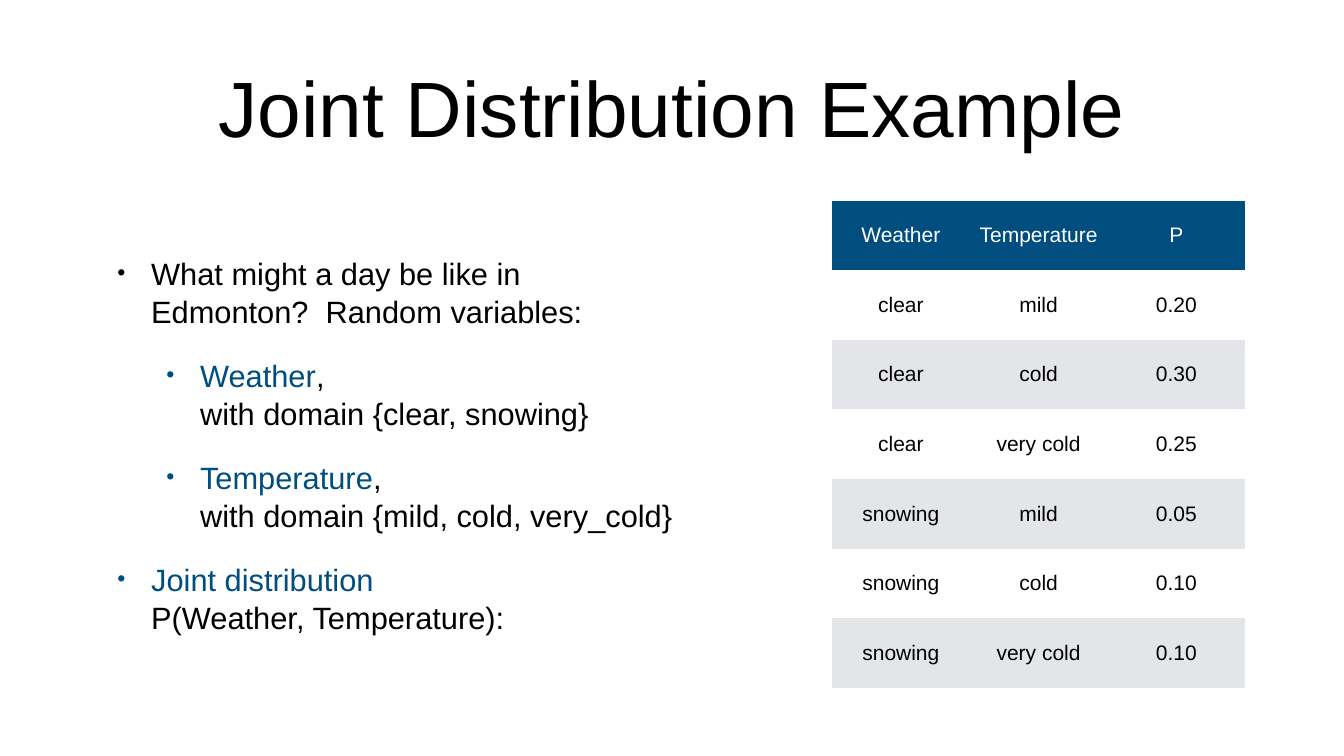
import pptx
import pptx.util
from pptx.dml.color import RGBColor
from pptx.enum.text import MSO_ANCHOR, PP_ALIGN
from pptx.oxml.xmlchemy import OxmlElement
from pptx.util import Inches, Pt

FONT = "Arial"
COLORS = {
    "text": "000000",
    "accent": "004D80",
    "white": "FFFFFF",
    "band": "E3E5E8",
}

# Each bullet: level, accented part, text before the break, text after it
BULLETS = [
    (0, "", "What might a day be like in Edmonton?  Random variables:", ""),
    (1, "Weather", ", ", "with domain {clear, snowing}"),
    (1, "Temperature", ", ", "with domain {mild, cold, very_cold}"),
    (0, "Joint distribution ", "", "P(Weather, Temperature):"),
]
JOINT_TABLE = [
    ("Weather", "Temperature", "P"),
    ("clear", "mild", "0.20"),
    ("clear", "cold", "0.30"),
    ("clear", "very cold", "0.25"),
    ("snowing", "mild", "0.05"),
    ("snowing", "cold", "0.10"),
    ("snowing", "very cold", "0.10"),
]


def rgb(name):
    return RGBColor.from_string(COLORS[name])


def add_run(paragraph, text, size, color):
    run = paragraph.add_run()
    run.text = text
    run.font.name = FONT
    run.font.size = Pt(size)
    run.font.bold = False
    run.font.color.rgb = rgb(color)


def set_margins(target, margin):
    """Set equal margins on a text frame or a table cell."""
    target.margin_left = target.margin_right = Inches(margin)
    target.margin_top = target.margin_bottom = Inches(margin)
    target.vertical_anchor = MSO_ANCHOR.MIDDLE


def set_bullet(paragraph):
    properties = paragraph._p.get_or_add_pPr()
    indent = Inches(0.67)
    left = Inches(0.67 + 0.97 * paragraph.level)
    properties.set("marL", str(left))
    properties.set("indent", str(-indent))
    for tag, attribute, value in (
        ("a:buSzPct", "val", "75000"),
        ("a:buFont", "typeface", FONT),
        ("a:buChar", "char", "•"),
    ):
        element = OxmlElement(tag)
        element.set(attribute, value)
        properties.append(element)


def add_title(slide, text):
    title = slide.shapes.title
    title.left, title.top = Inches(2.22), Inches(0.45)
    title.width, title.height = Inches(22.22), Inches(3.32)
    set_margins(title.text_frame, 0.08)
    paragraph = title.text_frame.paragraphs[0]
    paragraph.alignment = PP_ALIGN.CENTER
    add_run(paragraph, text, 112, "text")


def add_bullets(slide, bullets):
    box = slide.shapes.add_textbox(
        Inches(2.25), Inches(3.98), Inches(11.22), Inches(9.67))
    frame = box.text_frame
    frame.word_wrap = True
    set_margins(frame, 0.08)
    for index, (level, accent, lead, detail) in enumerate(bullets):
        paragraph = frame.add_paragraph() if index else frame.paragraphs[0]
        paragraph.level = level
        paragraph.line_spacing = 1.04
        paragraph.space_before = Pt(36)
        set_bullet(paragraph)
        if accent:
            add_run(paragraph, accent, 44, "accent")
        if lead:
            add_run(paragraph, lead, 44, "text")
        if detail:
            paragraph.add_line_break()
            add_run(paragraph, detail, 44, "text")


def add_table(slide, rows):
    table = slide.shapes.add_table(
        len(rows), len(rows[0]),
        Inches(16.51), Inches(3.98), Inches(8.2), Inches(9.67)).table
    for row_index, row in enumerate(rows):
        if row_index == 0:
            fill, color = "accent", "white"
        else:
            fill, color = ("white" if row_index % 2 else "band"), "text"
        for column_index, text in enumerate(row):
            cell = table.cell(row_index, column_index)
            cell.fill.solid()
            cell.fill.fore_color.rgb = rgb(fill)
            set_margins(cell, 0.06)
            # Hide the cell borders of the default table style
            properties = cell._tc.get_or_add_tcPr()
            for position, side in enumerate(("L", "R", "T", "B")):
                border = OxmlElement(f"a:ln{side}")
                border.set("w", "0")
                border.append(OxmlElement("a:noFill"))
                properties.insert(position, border)
            paragraph = cell.text_frame.paragraphs[0]
            paragraph.alignment = PP_ALIGN.CENTER
            add_run(paragraph, text, 30, color)


def main():
    presentation = pptx.Presentation()
    presentation.slide_width = Inches(26.67)
    presentation.slide_height = Inches(15)
    slide = presentation.slides.add_slide(presentation.slide_layouts[5])

    add_title(slide, "Joint Distribution Example")
    add_bullets(slide, BULLETS)
    add_table(slide, JOINT_TABLE)

    presentation.save("out.pptx")


if __name__ == "__main__":
    main()
